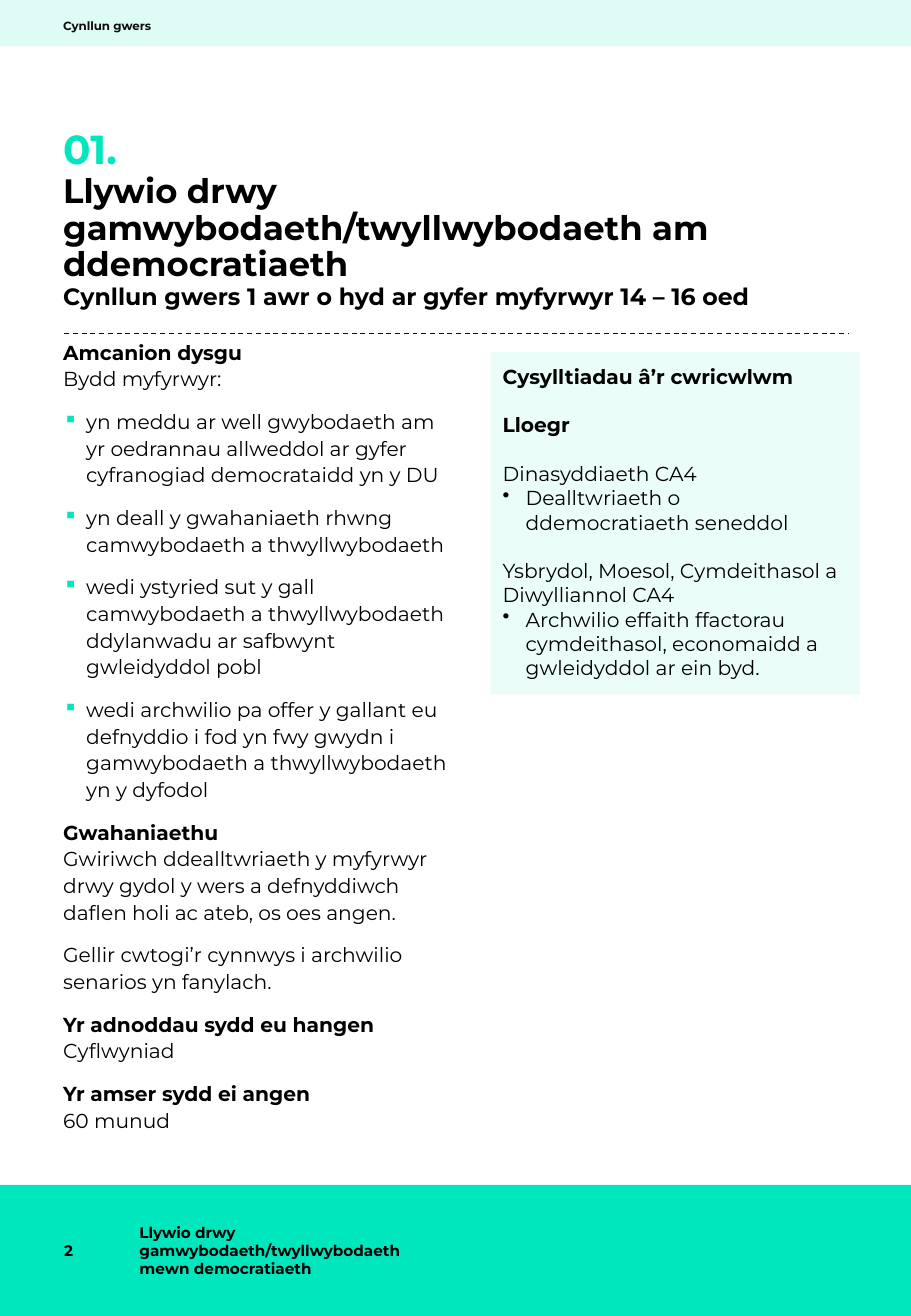
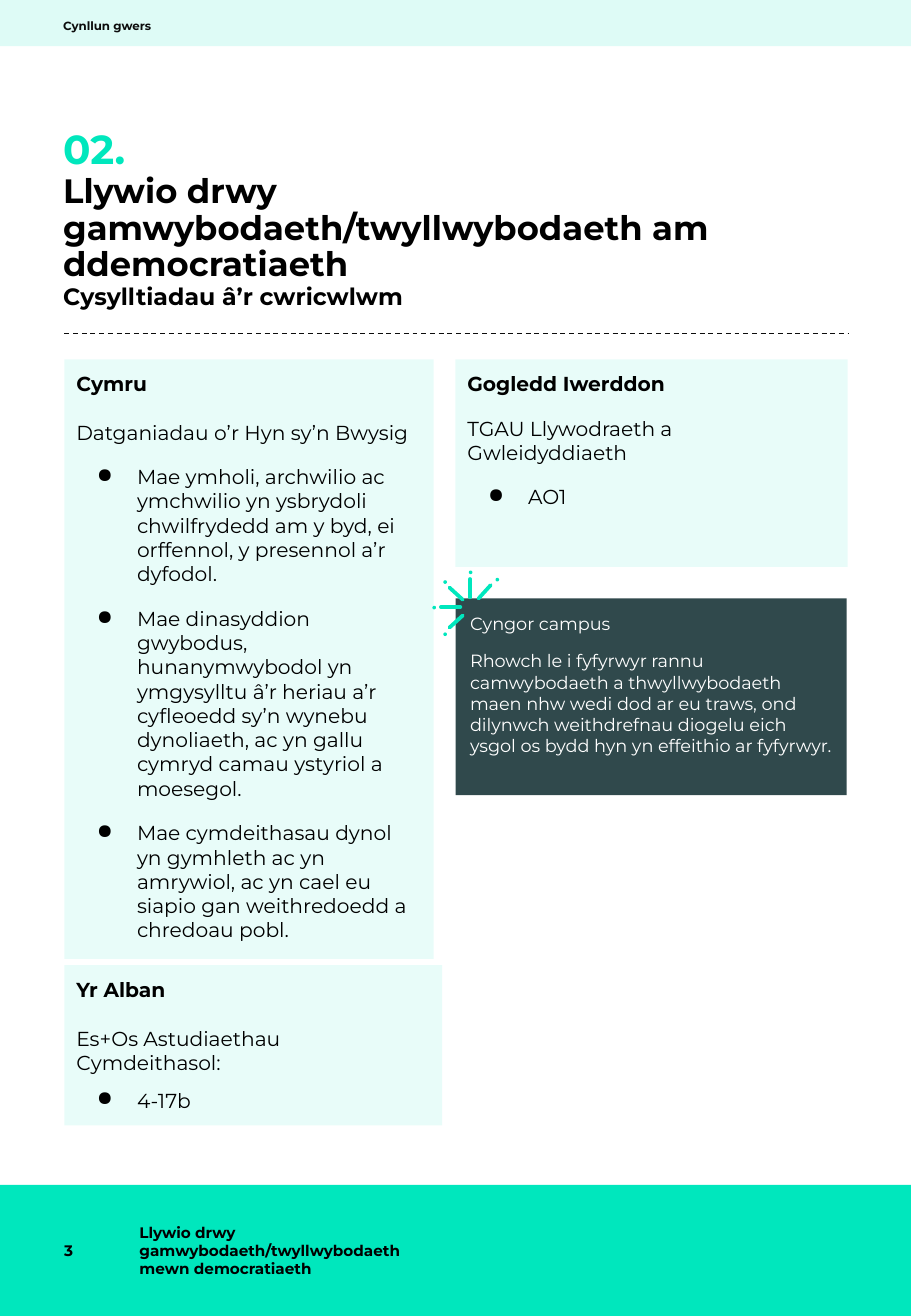
"""Build two Welsh lesson plan pages."""
from lxml import etree
from pptx import Presentation
from pptx import util as u
from pptx.dml import color as c
from pptx.enum import dml, shapes, text
from pptx.oxml import ns

PX = 9144
FONT = "Montserrat"
COLORS = {"mint": "00E7BD", "slate": "30494C", "black": "000000", "ink": "0C0C0C", "white": "FFFFFF"}
LINE = 14.4
BODY_GAP = 9.5

STYLES = {
    "number": {"size": 24, "bold": True, "color": "mint"},
    "title": {"size": 20, "bold": True, "format": {"line_spacing": 0.9}},
    "subtitle": {"size": 14, "bold": True},
    "header": {"size": 7, "bold": True, "color": "ink"},
    "footer": {"size": 9, "bold": True},
    "lead": {"lead": True, "format": {"line_spacing": 1.1}},
    "body": {"format": {"line_spacing": 1.1}},
    "aim": {"bullet": ("▪", "mint", 19, 19), "format": {"line_spacing": 1.1}},
    "heading": {"bold": True},
    "plain": {},
    "link": {"bullet": ("•", "black", 19, 19)},
    "outcome": {"bullet": ("●", "black", 50, 33)},
    "tip": {"size": 10.5, "color": "white"},
}

TITLE = "Llywio drwy gamwybodaeth/twyllwybodaeth am ddemocratiaeth"
FOOTER = "Llywio drwy gamwybodaeth/twyllwybodaeth mewn democratiaeth"

LESSON = [
    ("lead", 0, "Amcanion dysgu", "Bydd myfyrwyr:"),
    ("aim", BODY_GAP, "yn meddu ar well gwybodaeth am yr oedrannau allweddol ar gyfer "
     "cyfranogiad democrataidd yn y DU"),
    ("aim", BODY_GAP, "yn deall y gwahaniaeth rhwng camwybodaeth a thwyllwybodaeth"),
    ("aim", BODY_GAP, "wedi ystyried sut y gall camwybodaeth a thwyllwybodaeth "
     "ddylanwadu ar safbwynt gwleidyddol pobl"),
    ("aim", BODY_GAP, "wedi archwilio pa offer y gallant eu defnyddio i fod yn fwy gwydn i "
     "gamwybodaeth a thwyllwybodaeth yn y dyfodol"),
    ("lead", BODY_GAP, "Gwahaniaethu", "Gwiriwch ddealltwriaeth y myfyrwyr drwy gydol y wers "
     "a defnyddiwch daflen holi ac ateb, os oes angen."),
    ("body", BODY_GAP, "Gellir cwtogi’r cynnwys i archwilio senarios yn fanylach."),
    ("lead", BODY_GAP, "Yr adnoddau sydd eu hangen", "Cyflwyniad"),
    ("lead", BODY_GAP, "Yr amser sydd ei angen", "60 munud"),
]
ENGLAND = [
    ("heading", 0, "Cysylltiadau â’r cwricwlwm"),
    ("heading", LINE, "Lloegr"),
    ("plain", LINE, "Dinasyddiaeth CA4"),
    ("link", 0, "Dealltwriaeth o ddemocratiaeth seneddol"),
    ("plain", LINE, "Ysbrydol, Moesol, Cymdeithasol a Diwylliannol CA4"),
    ("link", 0, "Archwilio effaith ffactorau cymdeithasol, economaidd a gwleidyddol ar ein byd."),
]
WALES = [
    ("heading", 0, "Cymru"),
    ("plain", LINE, "Datganiadau o’r Hyn sy’n Bwysig"),
    ("outcome", 12, "Mae ymholi, archwilio ac ymchwilio yn ysbrydoli chwilfrydedd am y byd, "
     "ei orffennol, y presennol a’r dyfodol."),
    ("outcome", 12, "Mae dinasyddion gwybodus, hunanymwybodol yn ymgysylltu â’r heriau a’r "
     "cyfleoedd sy’n wynebu dynoliaeth, ac yn gallu cymryd camau ystyriol a moesegol."),
    ("outcome", 12, "Mae cymdeithasau dynol yn gymhleth ac yn amrywiol, ac yn cael eu siapio "
     "gan weithredoedd a chredoau pobl."),
]
NORTHERN_IRELAND = [
    ("heading", 0, "Gogledd Iwerddon"),
    ("plain", 12, "TGAU Llywodraeth a Gwleidyddiaeth"),
    ("outcome", 12, "AO1"),
]
SCOTLAND = [
    ("heading", 0, "Yr Alban"),
    ("plain", LINE, "Es+Os Astudiaethau Cymdeithasol:"),
    ("outcome", 8, "4-17b"),
]
CAMPUS_TIP = [
    ("tip", 0, "Cyngor campus"),
    ("tip", BODY_GAP, "Rhowch le i fyfyrwyr rannu camwybodaeth a thwyllwybodaeth maen nhw wedi "
     "dod ar eu traws, ond dilynwch weithdrefnau diogelu eich ysgol os bydd hyn yn effeithio "
     "ar fyfyrwyr."),
]
RAYS = [(363, 500, 379, 500), (387, 492, 387, 477), (381, 494, 370, 484),
        (381, 507, 370, 517), (394, 493, 404, 482)]
DOTS = [(357, 500), (366, 479), (387, 471), (366, 522), (409, 477)]


def rgb(name):
    return c.RGBColor.from_string(COLORS[name])


class Page:
    def __init__(self, presentation):
        self.slide = presentation.slides.add_slide(presentation.slide_layouts[6])

    def add_bullet(self, paragraph, character, color, left, hanging):
        properties = paragraph._p.get_or_add_pPr()
        properties.set("marL", str(left * PX))
        properties.set("indent", str(-hanging * PX))
        bullet_color = etree.SubElement(properties, ns.qn("a:buClr"))
        etree.SubElement(bullet_color, ns.qn("a:srgbClr"), val=COLORS[color])
        etree.SubElement(properties, ns.qn("a:buChar"), char=character)

    def set_text(self, shape, paragraphs, insets, anchor="TOP"):
        frame = shape.text_frame
        frame.word_wrap = True
        frame.vertical_anchor = text.MSO_ANCHOR[anchor]
        for side, inset in zip(("left", "top", "right", "bottom"), insets):
            setattr(frame, f"margin_{side}", inset * PX)
        for index, (style_name, before, *lines) in enumerate(paragraphs):
            style = STYLES[style_name]
            paragraph = frame.add_paragraph() if index else frame.paragraphs[0]
            if "bullet" in style:
                self.add_bullet(paragraph, *style["bullet"])
            settings = {"alignment": text.PP_ALIGN.LEFT, **style.get("format", {})}
            if before:
                settings["space_before"] = u.Pt(before)
            for name, value in settings.items():
                setattr(paragraph, name, value)
            for position, line in enumerate(lines):
                if position:
                    paragraph.add_line_break()
                run = paragraph.add_run()
                run.text = line
                bold = style.get("bold", False) or ("lead" in style and position == 0)
                font = {"name": FONT, "size": u.Pt(style.get("size", 12)), "bold": bold}
                for name, value in font.items():
                    setattr(run.font, name, value)
                run.font.color.rgb = rgb(style.get("color", "black"))

    def add_text(self, box, paragraphs, insets=(0, 0, 0, 0), anchor="TOP"):
        shape = self.slide.shapes.add_textbox(*(length * PX for length in box))
        self.set_text(shape, paragraphs, insets, anchor)

    def add_panel(self, box, color="mint", opacity=100, paragraphs=(), inset=10, kind="RECTANGLE"):
        shape = self.slide.shapes.add_shape(
            shapes.MSO_SHAPE[kind], *(length * PX for length in box))
        shape.shadow.inherit = False
        shape.line.fill.background()
        shape.fill.solid()
        shape.fill.fore_color.rgb = rgb(color)
        if opacity < 100:
            fill_color = shape._element.spPr.find(f".//{ns.qn('a:srgbClr')}")
            etree.SubElement(fill_color, ns.qn("a:alpha"), val=str(opacity * 1000))
        if paragraphs:
            self.set_text(shape, paragraphs, (inset,) * 4)

    def add_line(self, points, color, width, dash=None):
        connector = self.slide.shapes.add_connector(
            shapes.MSO_CONNECTOR.STRAIGHT, *(point * PX for point in points))
        connector.line.color.rgb = rgb(color)
        connector.line.width = u.Pt(width)
        properties = connector._element.spPr
        if dash:
            connector.line.dash_style = dash
        else:
            properties.find(ns.qn("a:ln")).set("cap", "rnd")
        etree.SubElement(properties, ns.qn("a:effectLst"))

    def add_frame(self, page_number, section, subtitle):
        self.add_panel((0, 0, 750, 38), opacity=13)
        self.add_panel((0, 976, 750, 108))
        self.add_text((52, 144, 646, 88), [("title", 0, TITLE)])
        for left, width, words in ((105, 277, FOOTER), (43, 62, page_number)):
            self.add_text((left, 976, width, 108), [("footer", 0, words)], (10, 5, 10, 5), "MIDDLE")
        self.add_text((52, 102, 646, 37), [("number", 0, section)])
        self.add_text((52, 7, 270, 28), [("header", 0, "Cynllun gwers")], anchor="MIDDLE")
        self.add_text((52, 232, 646, 42), [("subtitle", 0, subtitle)])
        self.add_line((53, 275, 698, 275), "ink", 0.75, dml.MSO_LINE.DASH)

    def add_spark(self):
        for ray in RAYS:
            self.add_line(ray, "mint", 2.25)
        for x, y in DOTS:
            self.add_panel((x - 1, y - 1, 3, 3), kind="OVAL")


def main():
    presentation = Presentation()
    presentation.slide_width = 750 * PX
    presentation.slide_height = 1084 * PX

    lesson = Page(presentation)
    lesson.add_frame("2", "01.", "Cynllun gwers 1 awr o hyd ar gyfer myfyrwyr 14 – 16 oed")
    lesson.add_text((52, 278, 316, 660), LESSON, (0, 0, 0, 10))
    lesson.add_panel((404, 290, 304, 282), opacity=8, paragraphs=ENGLAND)

    curriculum = Page(presentation)
    curriculum.add_frame("3", "02.", "Cysylltiadau â’r cwricwlwm")
    for box, paragraphs in (((53, 296, 304, 494), WALES),
                            ((375, 296, 323, 171), NORTHERN_IRELAND),
                            ((53, 795, 311, 132), SCOTLAND)):
        curriculum.add_panel(box, opacity=9, paragraphs=paragraphs)
    curriculum.add_panel((375, 493, 322, 162), "slate", paragraphs=CAMPUS_TIP, inset=12)
    curriculum.add_spark()

    presentation.save("out.pptx")


if __name__ == "__main__":
    main()
